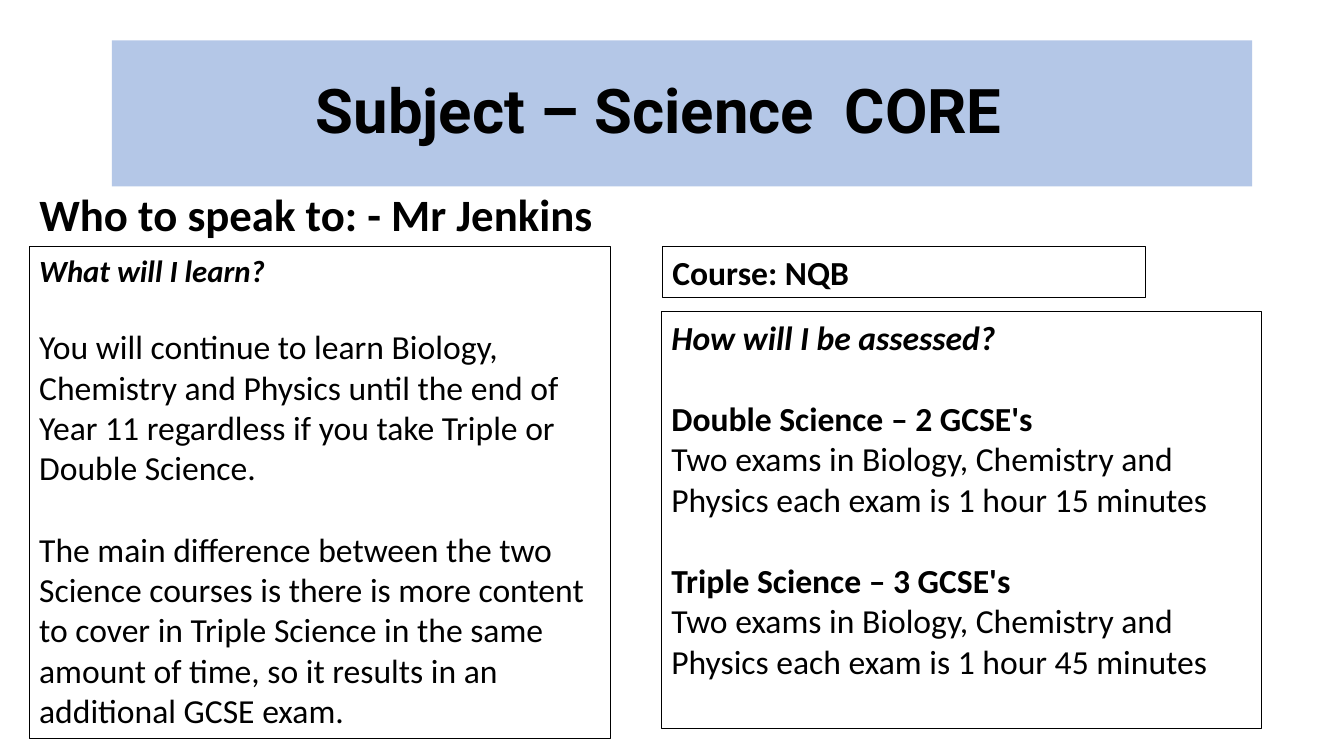
from pptx import Presentation
from pptx.dml.color import RGBColor
from pptx.enum import shapes, text
from pptx.util import Inches, Pt

COLOURS = {"band": "B4C7E7", "ink": "000000"}
LINE_GAP = 1.22  # height of one Calibri line, relative to its size


def colour(name):
    return RGBColor.from_string(COLOURS[name])


def place(shape, left, top, width, height):
    shape.left, shape.top = Inches(left), Inches(top)
    shape.width, shape.height = Inches(width), Inches(height)


def add_span(para, words, size, bold=False, italic=False, font="Calibri"):
    span = para.add_run()
    span.text = words
    span.font.name, span.font.size = font, Pt(size)
    span.font.bold, span.font.italic = bold, italic
    span.font.color.rgb = colour("ink")


def fill_placeholder(holder, area, words, size, font, align, anchor):
    place(holder, *area)
    frame = holder.text_frame
    frame.auto_size = text.MSO_AUTO_SIZE.NONE
    frame.word_wrap = True
    frame.vertical_anchor = anchor
    para = frame.paragraphs[0]
    para.alignment, para.line_spacing = align, 0.9
    para.space_before = Pt(0)
    add_span(para, words, size, bold=True, font=font)


def add_panel(page, area, lines):
    """Outlined box; each line is (words, size, bold, italic, gap before)."""
    box = page.shapes.add_shape(shapes.MSO_SHAPE.RECTANGLE, *map(Inches, area))
    box.shadow.inherit = False
    box.fill.background()
    box.line.color.rgb = colour("ink")
    box.line.width = Pt(0.75)
    frame = box.text_frame
    frame.word_wrap = True
    frame.vertical_anchor = text.MSO_ANCHOR.TOP
    for index, (words, size, bold, italic, gap) in enumerate(lines):
        para = frame.add_paragraph() if index else frame.paragraphs[0]
        para.alignment = text.PP_ALIGN.LEFT
        para.space_before = Pt(round(gap * LINE_GAP, 1))
        add_span(para, words, size, bold, italic)


def main():
    deck = Presentation()
    deck.slide_width, deck.slide_height = Inches(13.33), Inches(7.5)
    page = deck.slides.add_slide(deck.slide_layouts.get_by_name("Comparison"))
    title, contact, *unused = page.placeholders
    for holder in unused:
        holder.element.getparent().remove(holder.element)

    # Title band and contact line
    fill_placeholder(title, (1.11, 0.4, 11.31, 1.45), "Subject – Science  CORE", 44,
                     "Roboto", text.PP_ALIGN.CENTER, text.MSO_ANCHOR.MIDDLE)
    title.text_frame.margin_right = Inches(0.55)
    title.fill.solid()
    title.fill.fore_color.rgb = colour("band")
    fill_placeholder(contact, (0.29, 1.54, 6.48, 0.9), "Who to speak to: - Mr Jenkins", 32,
                     "Calibri", text.PP_ALIGN.LEFT, text.MSO_ANCHOR.BOTTOM)

    # Assessment
    add_panel(page, (6.56, 3.09, 5.95, 4.14), [
        ("How will I be assessed?", 24, True, True, 0),
        ("Double Science – 2 GCSE's", 24, True, False, 24),
        ("Two exams in Biology, Chemistry and Physics each exam is 1 hour 15 minutes",
         24, False, False, 0),
        ("Triple Science – 3 GCSE's", 24, True, False, 24),
        ("Two exams in Biology, Chemistry and Physics each exam is 1 hour 45 minutes",
         24, False, False, 0),
    ])

    # Learning
    add_panel(page, (0.29, 2.45, 5.77, 4.88), [
        ("What will I learn?", 22, True, True, 0),
        ("You will continue to learn Biology, Chemistry and Physics until the end of "
         "Year 11 regardless if you take Triple or Double Science.", 24, False, False, 22),
        ("The main difference between the two Science courses is there is more content "
         "to cover in Triple Science in the same amount of time, so it results in an "
         "additional GCSE exam.", 24, False, False, 24),
    ])

    # Course
    add_panel(page, (6.57, 2.45, 4.79, 0.5), [("Course: NQB", 24, True, False, 0)])

    deck.save("out.pptx")


if __name__ == "__main__":
    main()
